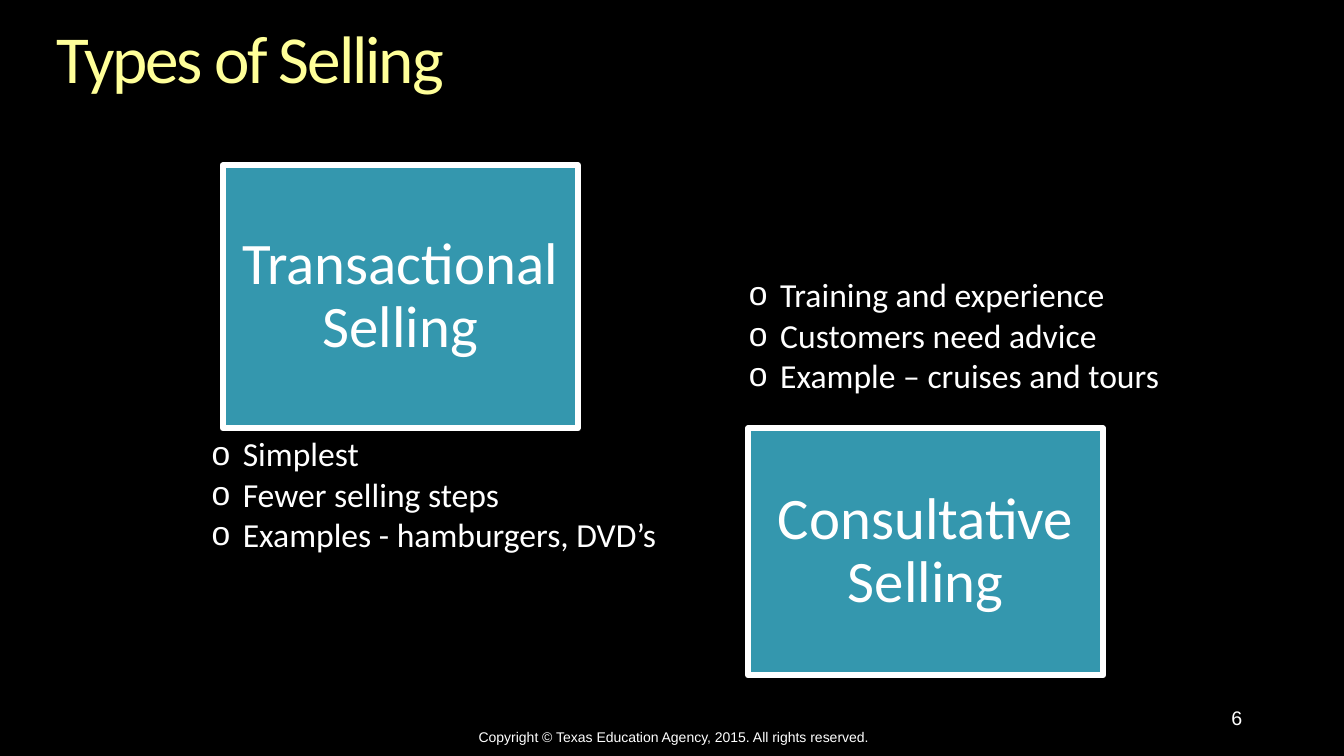
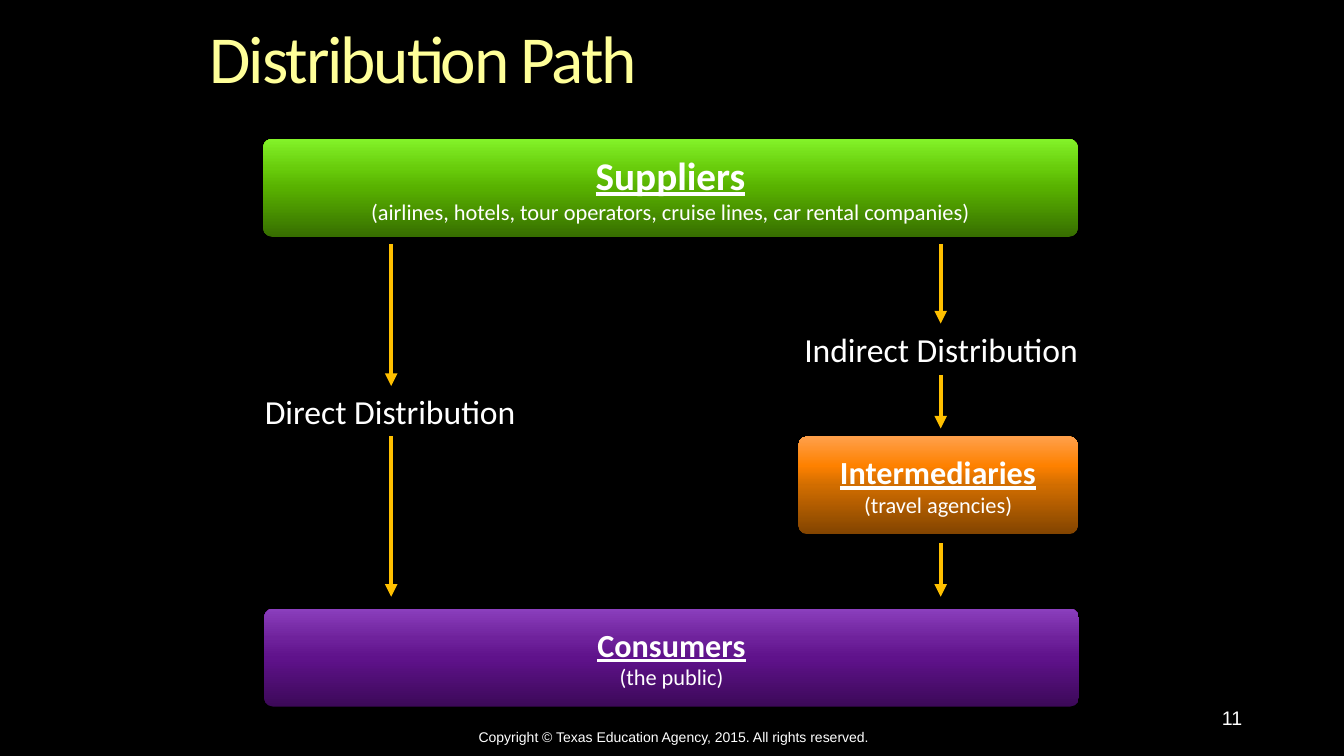
from lxml.etree import SubElement as Sub
from pptx import Presentation
from pptx.dml.color import RGBColor
from pptx.enum.shapes import MSO_CONNECTOR as LINE, MSO_SHAPE as SHAPE
from pptx.enum.text import MSO_ANCHOR as ANCHOR, PP_ALIGN as ALIGN
from pptx.oxml.ns import qn
from pptx.util import Inches, Pt

rgb = RGBColor.from_string
BLACK, WHITE, TITLE, TEAL, GOLD = "000000", "FFFFFF", "FFFF99", "3497AE", "FFC000"

prs = Presentation()
prs.slide_width, prs.slide_height = Inches(13.33), Inches(7.5)
back = prs.slide_master.background.fill
back.solid()
back.fore_color.rgb = rgb(BLACK)


def write(shape, text, size, align=ALIGN.CENTER, color=WHITE, face="Calibri", inset=None):
    """Fill a shape with text, one paragraph per line."""
    frame = shape.text_frame
    frame.word_wrap = True
    if inset is not None:
        frame.margin_left = frame.margin_right = Inches(inset)
        frame.margin_top = frame.margin_bottom = Inches(inset)
    frame.text = text
    for para in frame.paragraphs:
        para.alignment = align
        for run in para.runs:
            run.font.name, run.font.size = face, Pt(size)
            run.font.color.rgb = rgb(color)
    return frame


def page(name, left, width, number):
    """Add a slide with its title, copyright line and number."""
    slide = prs.slides.add_slide(prs.slide_layouts[5])
    title = slide.shapes.title
    title.left, title.top = Inches(left), Inches(0.25)
    title.width, title.height = Inches(width), Inches(0.73)
    frame = write(title, name, 48, ALIGN.LEFT, TITLE, inset=0)
    frame.vertical_anchor = ANCHOR.TOP
    para = frame.paragraphs[0]
    para.line_spacing = 0.9
    para.runs[0].font._element.set("spc", "-150")
    foot = slide.shapes.add_textbox(Inches(4.18), Inches(7.18), Inches(5), Inches(0.27))
    write(foot, "Copyright © Texas Education Agency, 2015. All rights reserved.", 10, face="Arial")
    num = slide.shapes.add_textbox(Inches(9.42), Inches(6.95), Inches(3), Inches(0.4))
    write(num, number, 14, ALIGN.RIGHT, face="Arial")
    return slide.shapes


# Types of selling: two framed boxes
shapes = page("Types of Selling", 0.56, 12.22, "6")
for text, left, top, high in [
    ("Transactional Selling", 2.21, 1.64, 2.61),
    ("Consultative Selling", 7.42, 4.25, 2.45),
]:
    box = shapes.add_shape(SHAPE.RECTANGLE, Inches(left), Inches(top), Inches(3.52), Inches(high))
    box.shadow.inherit = False
    box.fill.solid()
    box.fill.fore_color.rgb = rgb(TEAL)
    box.line.color.rgb = rgb(WHITE)
    box.line.width = Pt(4.33)
    Sub(box.line._get_or_add_ln(), qn("a:round"))
    frame = write(box, text, 42, inset=0.17)
    frame.vertical_anchor = ANCHOR.MIDDLE
    frame.paragraphs[0].line_spacing = 0.9

# Bulleted notes
for text, left, top, wide in [
    ("Simplest\nFewer selling steps\nExamples - hamburgers, DVD’s", 2, 4.25, 4.75),
    ("Training and experience\nCustomers need advice\nExample – cruises and tours", 7.33, 2.67, 4.31),
]:
    notes = shapes.add_textbox(Inches(left), Inches(top), Inches(wide), Inches(1.62))
    for para in write(notes, text, 24, ALIGN.LEFT).paragraphs:
        props = para._p.get_or_add_pPr()
        props.set("marL", str(Inches(0.31)))
        props.set("indent", str(-Inches(0.31)))
        Sub(props, qn("a:buFont"), typeface="Arial")
        Sub(props, qn("a:buChar"), char="o")

# Distribution path: gradient bars, colours from bottom to top
shapes = page("Distribution Path", 2.08, 9.17, "11")
for head, note, size, left, top, wide, shades in [
    ("Suppliers", "(airlines, hotels, tour operators, cruise lines, car rental companies)",
     28, 2.61, 1.38, 8.08, ["376E00", "58B100", "68CC0B", "83F229"]),
    ("Intermediaries", "(travel agencies)",
     23, 7.92, 4.33, 2.77, ["824400", "D16D00", "FE8100", "FFA04B"]),
    ("Consumers", "(the public)",
     23, 2.62, 6.04, 8.08, ["3C0958", "5F128B", "6F229C", "8B3FBD"]),
]:
    bar = shapes.add_shape(SHAPE.ROUNDED_RECTANGLE, Inches(left), Inches(top), Inches(wide), Inches(0.97))
    bar.adjustments[0] = 0.09
    bar.shadow.inherit = False
    bar.line.fill.background()
    bar.fill.gradient()
    bar.fill.gradient_angle = 90
    stops = bar._element.spPr.find(".//" + qn("a:gsLst"))
    for old in list(stops):
        stops.remove(old)
    for place, shade in zip([0, 50, 70, 100], shades):
        stop = Sub(stops, qn("a:gs"), pos=str(place * 1000))
        Sub(stop, qn("a:srgbClr"), val=shade)
    frame = write(bar, head + "\n" + note, 16)
    frame.vertical_anchor = ANCHOR.MIDDLE
    font = frame.paragraphs[0].runs[0].font
    font.size, font.bold, font.underline = Pt(size), True, True

# Path labels
for text, left, top, wide in [
    ("Indirect Distribution", 7.75, 3.21, 3.17),
    ("Direct Distribution", 2.33, 3.83, 3.08),
]:
    label = shapes.add_textbox(Inches(left), Inches(top), Inches(wide), Inches(0.5))
    write(label, text, 24)

# Arrows down each path
for x, spans in [
    (3.88, [(2.42, 3.83), (4.33, 5.92)]),
    (9.33, [(2.42, 3.21), (3.72, 4.25), (5.39, 5.92)]),
]:
    for start, end in spans:
        arrow = shapes.add_connector(LINE.STRAIGHT, Inches(x), Inches(start), Inches(x), Inches(end))
        arrow.line.color.rgb = rgb(GOLD)
        arrow.line.width = Pt(3)
        Sub(arrow.line._get_or_add_ln(), qn("a:tailEnd"), type="triangle")
        Sub(arrow._element.spPr, qn("a:effectLst"))

prs.save("out.pptx")
